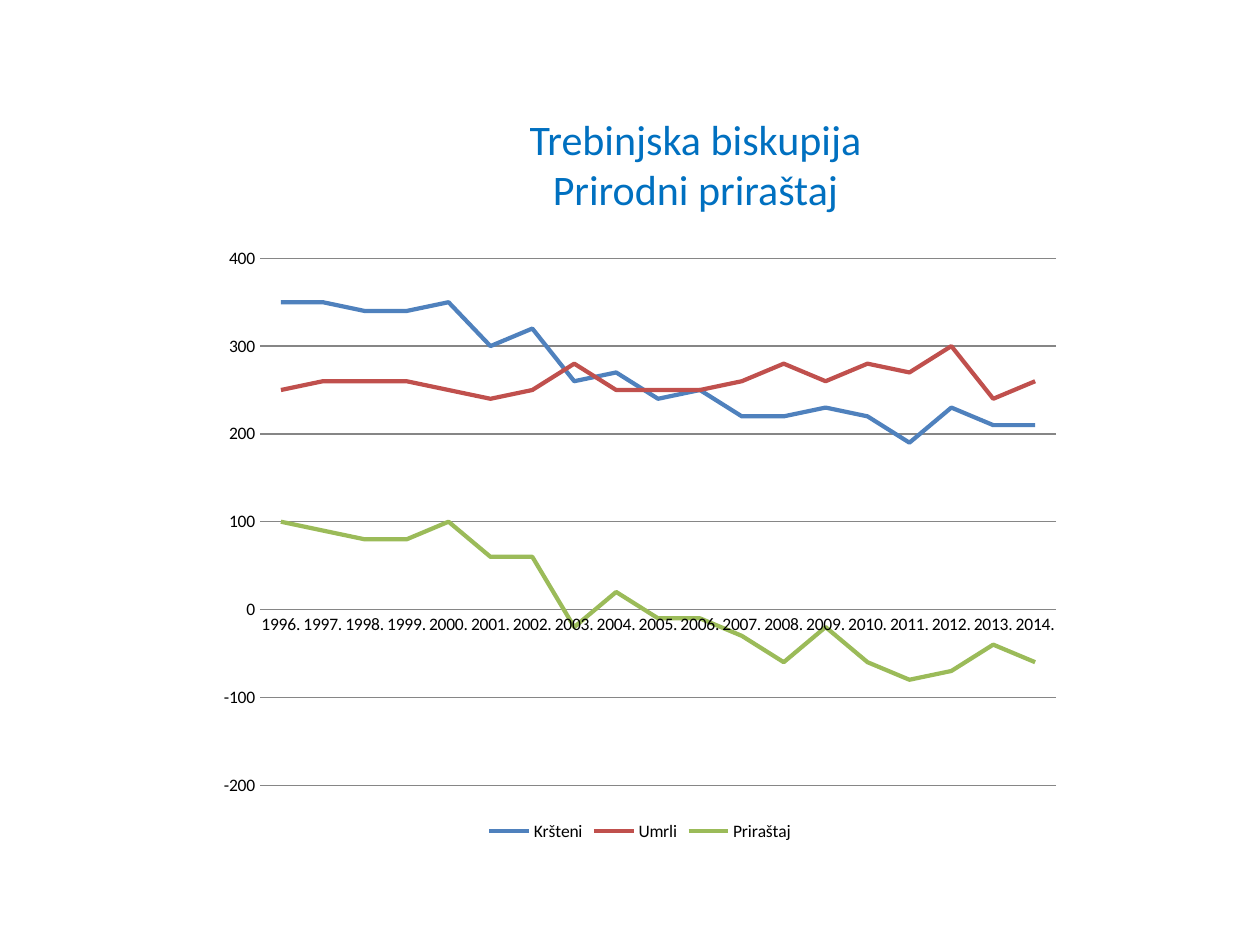
from dataclasses import dataclass

from pptx import Presentation
from pptx.chart.data import CategoryChartData
from pptx.dml.color import RGBColor
from pptx.enum.chart import XL_CHART_TYPE, XL_LEGEND_POSITION, XL_TICK_MARK
from pptx.enum.text import MSO_ANCHOR, PP_ALIGN
from pptx.util import Pt


@dataclass(frozen=True)
class Theme:
    font: str = "Calibri"
    title_size: Pt = Pt(24)
    chart_size: Pt = Pt(10)
    title: RGBColor = RGBColor.from_string("0070C0")
    text: RGBColor = RGBColor.from_string("000000")
    grid: RGBColor = RGBColor.from_string("868686")
    series: tuple = ("4F81BD", "C0504D", "9BBB59")


theme = Theme()

presentation = Presentation()
presentation.slide_width, presentation.slide_height = Pt(720), Pt(540)
slide = presentation.slides.add_slide(presentation.slide_layouts[5])

# Title
title = slide.shapes.title
title.left, title.top, title.width, title.height = Pt(90.7), Pt(48.5), Pt(613.4), Pt(90)
title.text_frame.vertical_anchor = MSO_ANCHOR.MIDDLE
paragraph = title.text_frame.paragraphs[0]
paragraph.text = "Trebinjska biskupija\vPrirodni priraštaj"
paragraph.alignment = PP_ALIGN.CENTER
paragraph.font.name = theme.font
paragraph.font.size = theme.title_size
paragraph.font.color.rgb = theme.title

# Chart data, rounded to tens
series_values = {
    "Kršteni": [350, 350, 340, 340, 350, 300, 320, 260, 270, 240,
                250, 220, 220, 230, 220, 190, 230, 210, 210],
    "Umrli": [250, 260, 260, 260, 250, 240, 250, 280, 250, 250,
              250, 260, 280, 260, 280, 270, 300, 240, 260],
    "Priraštaj": [100, 90, 80, 80, 100, 60, 60, -20, 20, -10,
                  -10, -30, -60, -20, -60, -80, -70, -40, -60],
}
chart_data = CategoryChartData(number_format="#,##0")
chart_data.categories = [f"{year}." for year in range(1996, 2015)]
for name, values in series_values.items():
    chart_data.add_series(name, values)

# Line chart
chart = slide.shapes.add_chart(
    XL_CHART_TYPE.LINE, Pt(118), Pt(135), Pt(495.4), Pt(348.5), chart_data
).chart
chart.has_title = False
chart.font.name = theme.font
chart.font.size = theme.chart_size
chart.font.color.rgb = theme.text
chart.has_legend = True
chart.legend.position = XL_LEGEND_POSITION.BOTTOM
chart.legend.include_in_layout = False

plot = chart.plots[0]
plot.vary_by_categories = False
for series, color in zip(plot.series, theme.series):
    series.smooth = False
    series.format.line.width = Pt(2.4)
    series.format.line.color.rgb = RGBColor.from_string(color)

# Axes
value_axis, category_axis = chart.value_axis, chart.category_axis
for axis in (value_axis, category_axis):
    axis.major_tick_mark = XL_TICK_MARK.NONE
    axis.minor_tick_mark = XL_TICK_MARK.NONE
value_axis.minimum_scale = -200
value_axis.maximum_scale = 400
value_axis.major_unit = 100
value_axis.tick_labels.number_format = "#,##0"
value_axis.tick_labels.number_format_is_linked = False
value_axis.format.line.fill.background()
value_axis.has_major_gridlines = True
for line in (value_axis.major_gridlines.format.line, category_axis.format.line):
    line.width = Pt(0.75)
    line.color.rgb = theme.grid

presentation.save("out.pptx")
